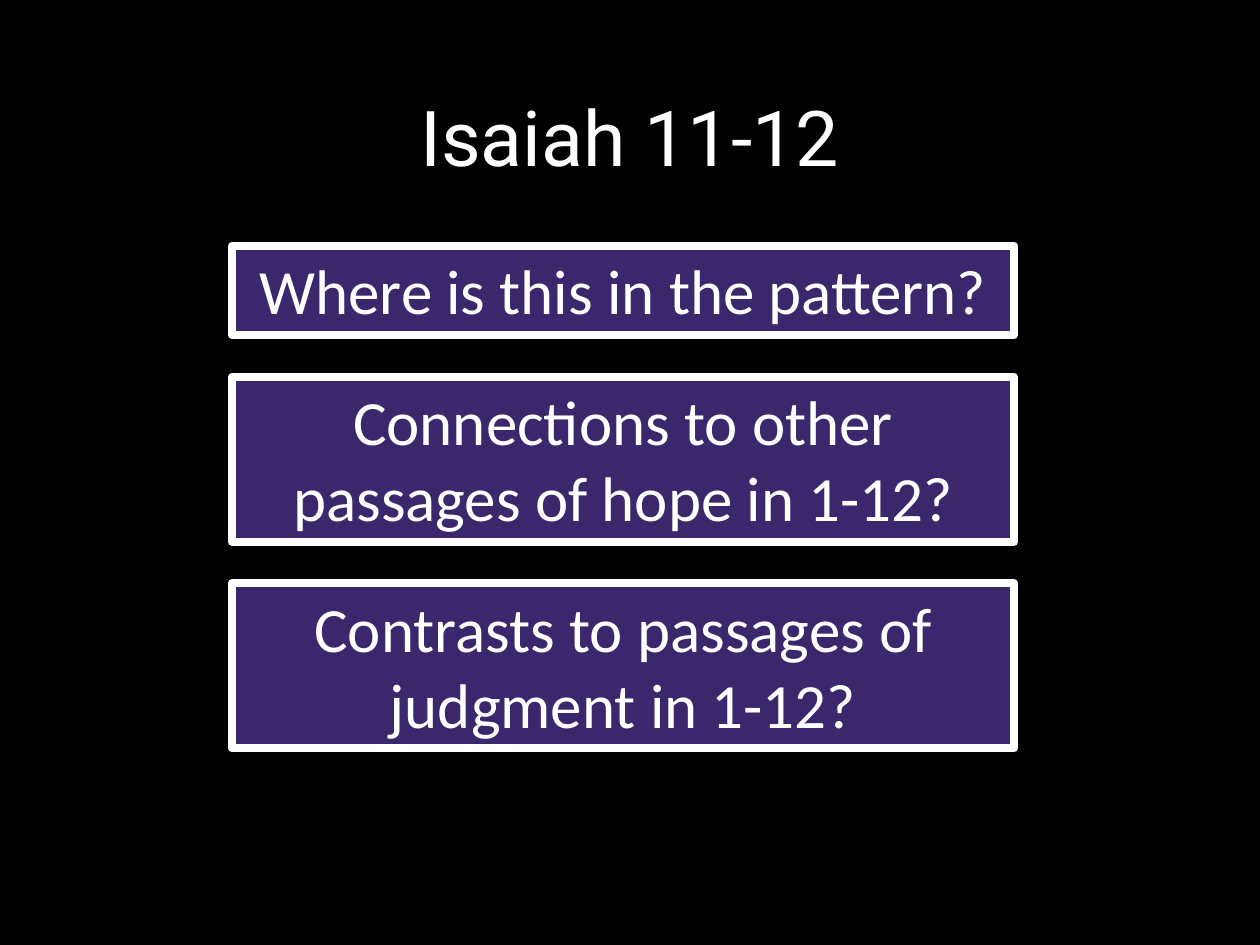
from pptx import Presentation
from pptx.dml.color import RGBColor
from pptx.enum.shapes import MSO_SHAPE as Shape
from pptx.enum.text import MSO_ANCHOR as Anchor, MSO_AUTO_SIZE as AutoSize, PP_ALIGN as Align
from pptx.util import Inches, Pt

# Content: each question with the number of lines it fills
TITLE = "Isaiah 11-12"
QUESTIONS = [
    ("Where is this in the pattern?", 1),
    ("Connections to other passages of hope in 1-12?", 2),
    ("Contrasts to passages of judgment in 1-12?", 2),
]

# Layout in inches
BOX_LEFT, BOX_WIDTH, FIRST_TOP = 1.84, 6.21, 1.95
LINE_HEIGHT, BOX_PADDING, GAP = 0.6, 0.11, 0.33

BLACK, WHITE, PURPLE = "000000", "FFFFFF", "3A276C"


def paint(fill, color):
    fill.solid()
    fill.fore_color.rgb = RGBColor.from_string(color)


def write(text_frame, text, font_name, size):
    text_frame.text = text
    text_frame.word_wrap = True
    paragraph = text_frame.paragraphs[0]
    paragraph.alignment = Align.CENTER
    font = paragraph.runs[0].font
    font.name, font.size = font_name, Pt(size)
    paint(font.fill, WHITE)
    return paragraph


presentation = Presentation()
presentation.slide_width, presentation.slide_height = Inches(10), Inches(7.5)
slide = presentation.slides.add_slide(presentation.slide_layouts[5])
paint(slide.background.fill, BLACK)

# Title
title = slide.shapes.title
title.left, title.top = Inches(0.69), Inches(0.4)
title.width, title.height = Inches(8.62), Inches(1.45)
title.text_frame.vertical_anchor = Anchor.MIDDLE
write(title.text_frame, TITLE, "Roboto", 44).line_spacing = 0.9

# Question boxes, stacked with equal gaps
top = FIRST_TOP
for question, line_count in QUESTIONS:
    height = BOX_PADDING + line_count * LINE_HEIGHT
    box = slide.shapes.add_shape(
        Shape.RECTANGLE, Inches(BOX_LEFT), Inches(top), Inches(BOX_WIDTH), Inches(height))
    box.shadow.inherit = False
    paint(box.fill, PURPLE)
    paint(box.line.fill, WHITE)
    box.line.width = Pt(4.5)
    box.text_frame.vertical_anchor = Anchor.TOP
    box.text_frame.auto_size = AutoSize.SHAPE_TO_FIT_TEXT
    write(box.text_frame, question, "Calibri", 36)
    top += height + GAP

presentation.save("out.pptx")
